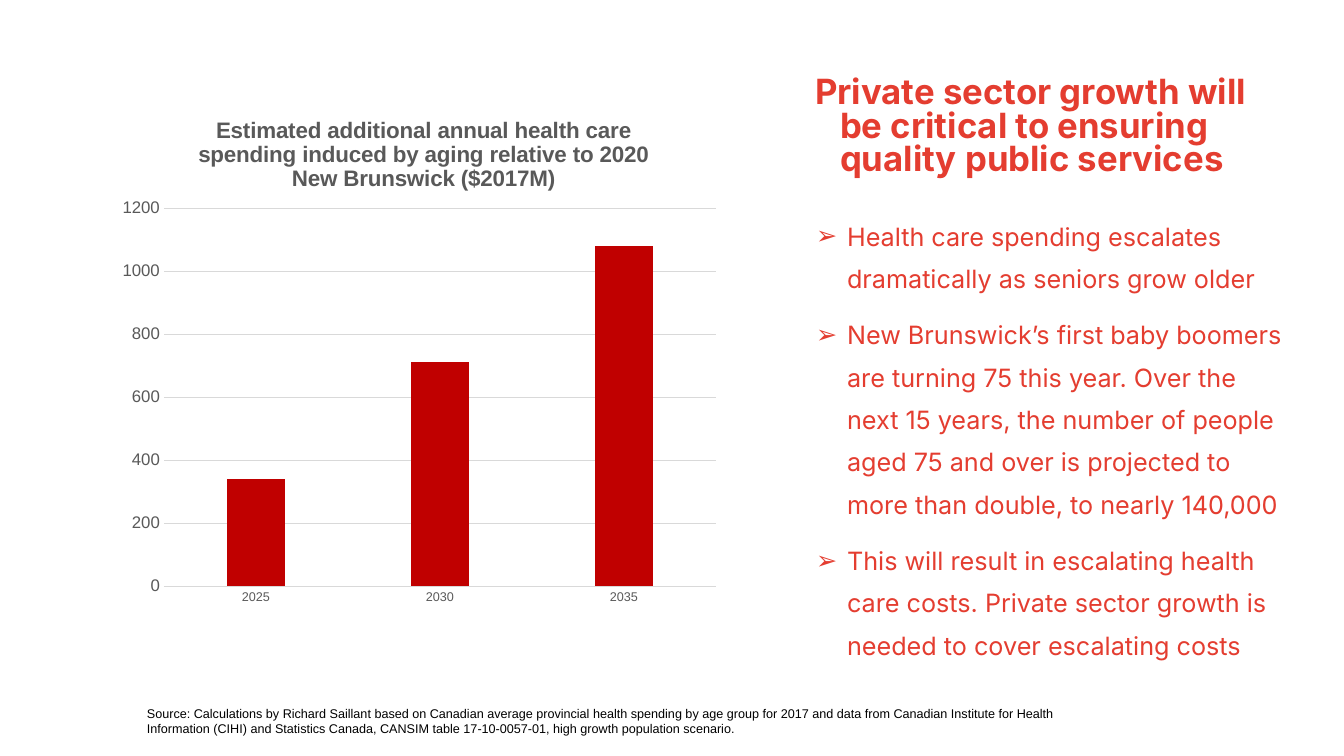
from dataclasses import dataclass

from lxml import etree
from pptx import Presentation
from pptx.chart.data import CategoryChartData
from pptx.dml.color import RGBColor
from pptx.enum import chart as charts, text
from pptx.oxml import ns
from pptx.util import Emu, Pt

# Content
HEADLINE = "Private sector growth will be critical to ensuring quality public services"
POINTS = [
    "Health care spending escalates dramatically as seniors grow older",
    "New Brunswick’s first baby boomers are turning 75 this year. Over the next 15 years, "
    "the number of people aged 75 and over is projected to more than double, to nearly 140,000",
    "This will result in escalating health care costs. Private sector growth is needed "
    "to cover escalating costs",
]
SPENDING_TITLE = ("Estimated additional annual health care spending induced by aging "
                  "relative to 2020 New Brunswick ($2017M)")
SPENDING = {"2025": 340, "2030": 710, "2035": 1080}
SOURCE = (
    "Source: Calculations by Richard Saillant based on Canadian average provincial health "
    "spending by age group for 2017 and data from Canadian Institute for Health Information "
    "(CIHI) and Statistics Canada, CANSIM table 17-10-0057-01, high growth population scenario."
)

# Positions in px: left, top, width, height
SLIDE = (1344, 756)
HEADLINE_BOX = (780, 73, 513, 131)
POINTS_BOX = (780, 204, 513, 481)
CHART_BOX = (110, 91, 619, 523)
PLOT_BOX = (164, 208, 552, 378)
CHART_TITLE_AT = (194, 112)
SOURCE_BOX = (137, 701, 987, 40)


@dataclass(frozen=True)
class Theme:
    red: RGBColor = RGBColor(0xE4, 0x3D, 0x30)
    bar: RGBColor = RGBColor(0xC0, 0x00, 0x00)
    grey: RGBColor = RGBColor(0x59, 0x59, 0x59)
    rule: RGBColor = RGBColor(0xD9, 0xD9, 0xD9)
    black: RGBColor = RGBColor(0, 0, 0)
    display: str = "Inter"
    plain: str = "Arial"
    headline: float = 24.8
    point: float = 18
    chart_title: float = 16
    value: float = 12
    small: float = 9


THEME = Theme()


def px(length):
    return Emu(round(length * 914400 / 100.8))


def style(font, name, size, color, bold=False):
    font.name, font.size, font.bold = name, Pt(size), bold
    font.color.rgb = color


def place(shape, box):
    shape.left, shape.top, shape.width, shape.height = map(px, box)


def prepare(placeholder, box):
    place(placeholder, box)
    frame = placeholder.text_frame
    frame.word_wrap = True
    frame.auto_size = text.MSO_AUTO_SIZE.NONE
    frame.vertical_anchor = text.MSO_ANCHOR.TOP
    return frame


def hang(paragraph, margin, outdent, spacing):
    paragraph.alignment = text.PP_ALIGN.LEFT
    paragraph.line_spacing = spacing
    properties = paragraph._p.get_or_add_pPr()
    properties.set("marL", str(px(margin)))
    properties.set("indent", str(-px(outdent)))
    return properties


def set_layout(parent, fractions, inner=False):
    """Give a chart part a fixed place, as fractions of the chart."""
    for old in parent.findall(ns.qn("c:layout")):
        parent.remove(old)
    layout = etree.Element(ns.qn("c:layout"))
    manual = etree.SubElement(layout, ns.qn("c:manualLayout"))
    settings = {"layoutTarget": "inner"} if inner else {}
    settings |= {"xMode": "edge", "yMode": "edge"}
    settings |= {key: f"{part:.3f}" for key, part in zip("xywh", fractions)}
    for key, setting in settings.items():
        etree.SubElement(manual, ns.qn(f"c:{key}")).set("val", setting)
    heading = parent.find(ns.qn("c:tx"))
    if heading is None:
        parent.insert(0, layout)
    else:
        heading.addnext(layout)


def add_headline(slide):
    frame = prepare(slide.shapes.title, HEADLINE_BOX)
    frame.text = HEADLINE
    headline = frame.paragraphs[0]
    hang(headline, 50, 25, 0.8)
    style(headline.runs[0].font, THEME.display, THEME.headline, THEME.red, True)


def add_points(slide):
    frame = prepare(slide.placeholders[1], POINTS_BOX)
    frame.text = "\n".join(POINTS)
    for index, point in enumerate(frame.paragraphs):
        properties = hang(point, 57, 31, 1.4)
        point.space_before = Pt(10 if index else 0)
        color = etree.SubElement(properties, ns.qn("a:buClr"))
        etree.SubElement(color, ns.qn("a:srgbClr")).set("val", str(THEME.red))
        etree.SubElement(properties, ns.qn("a:buFont")).set("typeface", THEME.plain)
        etree.SubElement(properties, ns.qn("a:buChar")).set("char", "➢")
        style(point.runs[0].font, THEME.display, THEME.point, THEME.red)


def add_spending_chart(slide):
    data = CategoryChartData(number_format="0")
    data.categories = list(SPENDING)
    data.add_series("Series 1", list(SPENDING.values()))
    chart = slide.shapes.add_chart(
        charts.XL_CHART_TYPE.COLUMN_CLUSTERED, *map(px, CHART_BOX), data).chart
    style(chart.font, THEME.plain, 10, THEME.black)
    chart.has_legend = False

    # Chart title
    heading = chart.chart_title.text_frame
    heading.text = SPENDING_TITLE
    style(heading.paragraphs[0].runs[0].font, THEME.plain, THEME.chart_title, THEME.grey, True)

    # Bars
    plot = chart.plots[0]
    plot.gap_width, plot.overlap, plot.vary_by_categories = 219, -27, False
    fill = plot.series[0].format.fill
    fill.solid()
    fill.fore_color.rgb = THEME.bar

    # Axes
    years, amounts = chart.category_axis, chart.value_axis
    for axis, size in ((years, THEME.small), (amounts, THEME.value)):
        axis.major_tick_mark = axis.minor_tick_mark = charts.XL_TICK_MARK.NONE
        style(axis.tick_labels.font, THEME.plain, size, THEME.grey)
    amounts.minimum_scale, amounts.maximum_scale, amounts.major_unit = 0, 1200, 200
    amounts.has_major_gridlines = True
    amounts.format.line.fill.background()
    for line in (years.format.line, amounts.major_gridlines.format.line):
        line.color.rgb, line.width = THEME.rule, Pt(0.75)

    # Fixed places inside the chart
    left, top, width, height = CHART_BOX
    x, y, plot_width, plot_height = PLOT_BOX
    title_x, title_y = CHART_TITLE_AT
    area = chart._chartSpace.chart.plotArea
    set_layout(area, ((x - left) / width, (y - top) / height,
                      plot_width / width, plot_height / height), inner=True)
    set_layout(chart.chart_title._element,
               ((title_x - left) / width, (title_y - top) / height))


def add_source(slide):
    frame = slide.shapes.add_textbox(*map(px, SOURCE_BOX)).text_frame
    frame.word_wrap = True
    frame.auto_size = text.MSO_AUTO_SIZE.SHAPE_TO_FIT_TEXT
    frame.text = SOURCE
    style(frame.paragraphs[0].runs[0].font, THEME.plain, THEME.small, THEME.black)


def main():
    deck = Presentation()
    deck.slide_width, deck.slide_height = map(px, SLIDE)
    slide = deck.slides.add_slide(deck.slide_layouts[1])
    add_headline(slide)
    add_points(slide)
    add_spending_chart(slide)
    add_source(slide)
    deck.save("out.pptx")


if __name__ == "__main__":
    main()
